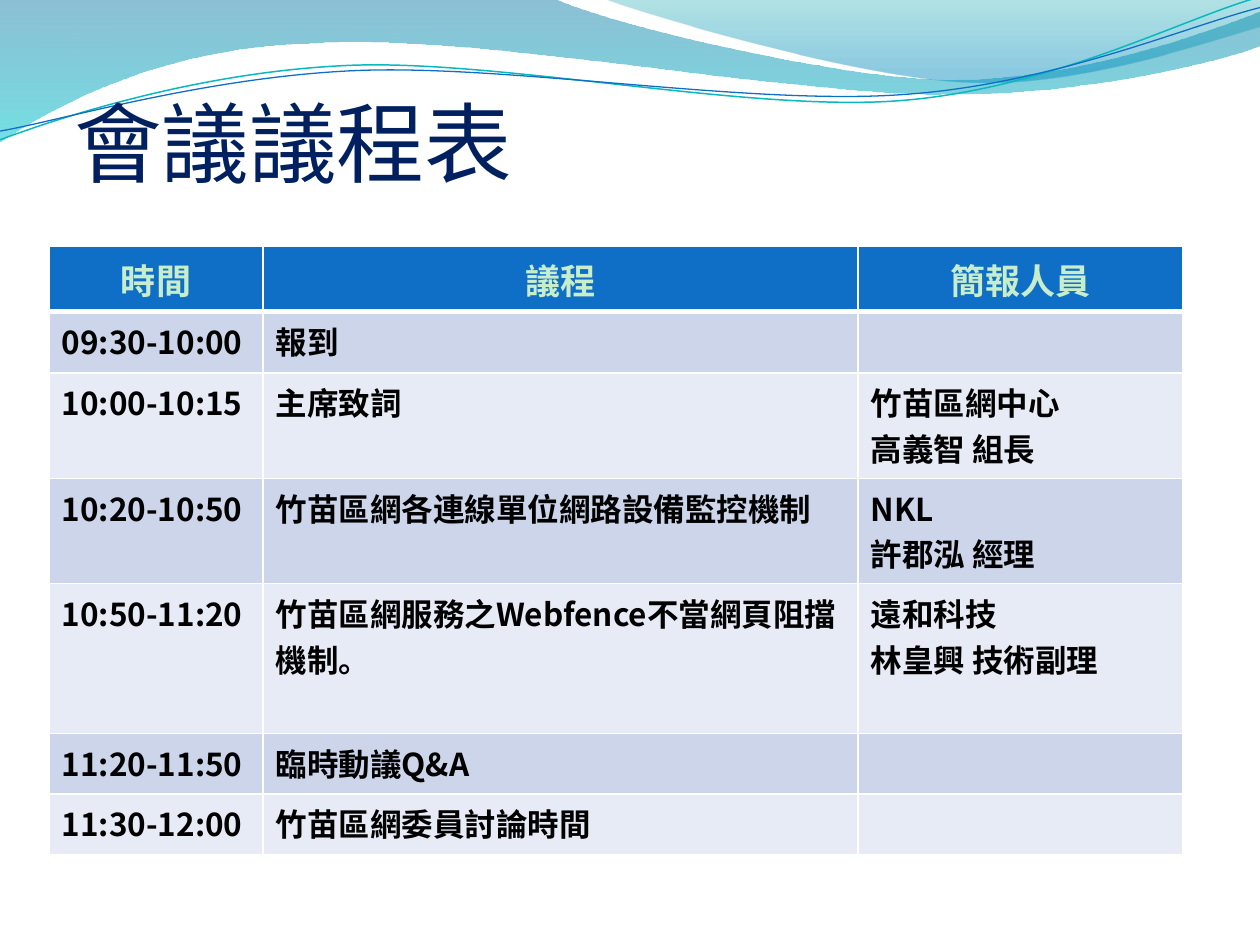
"""Build the meeting agenda slide with its wave header and schedule table."""
import pptx
import pptx.dml.color
import pptx.enum.text
import pptx.oxml.ns
import pptx.util
from lxml import etree

Pt = pptx.util.Pt
qn = pptx.oxml.ns.qn
ALIGN = pptx.enum.text.PP_ALIGN
ANCHOR = pptx.enum.text.MSO_ANCHOR
SANS = "Noto Sans CJK SC"
SERIF = "Times New Roman"


def rgb(value):
    return pptx.dml.color.RGBColor.from_string(value)


class Deck:
    white, navy, blue, mint, black = "FFFFFF", "002060", "0F6FC6", "C7EDCC", "000000"
    bands = ("CCD5EA", "E7EBF5")

    def __init__(self, width, height):
        self.prs = pptx.Presentation()
        self.prs.slide_width, self.prs.slide_height = Pt(width), Pt(height)
        self.slide = self.prs.slides.add_slide(self.prs.slide_layouts[6])
        fill = self.slide.background.fill
        fill.solid()
        fill.fore_color.rgb = rgb(self.white)

    def outline(self, start, segments, close):
        points = [(Pt(x), Pt(y)) for segment in segments for x, y in segment]
        builder = self.slide.shapes.build_freeform(Pt(start[0]), Pt(start[1]))
        builder.add_line_segments(points, close=close)
        sp = builder.convert_to_shape()
        sp.shadow.inherit = False
        lines = iter(list(sp._element.spPr.iter(qn("a:lnTo"))))
        for segment in segments:
            steps = [next(lines) for _ in segment]
            if len(steps) == 3:
                bezier = etree.Element(qn("a:cubicBezTo"))
                steps[0].addprevious(bezier)
                for step in steps:
                    bezier.append(step[0])
                    step.getparent().remove(step)
        return sp

    def wave(self, start, segments, stops):
        sp = self.outline(start, segments, True)
        sp.line.fill.background()
        sp.fill.gradient()
        sp.fill.gradient_angle = 270
        for stop, (position, color, _) in zip(sp.fill.gradient_stops, stops):
            stop.position = position
            stop.color.rgb = rgb(color)
        clrs = sp._element.spPr.iter(qn("a:srgbClr"))
        for clr, (_, _, opacity) in zip(clrs, stops):
            etree.SubElement(clr, qn("a:alpha"), val=str(opacity * 1000))

    def curve(self, start, segments, color, width):
        sp = self.outline(start, segments, False)
        sp.fill.background()
        sp.line.color.rgb = rgb(color)
        sp.line.width = Pt(width)

    def style_text(self, tf, size, font, color, bold=False, align=ALIGN.LEFT):
        for p in tf.paragraphs:
            p.alignment = align
            for r in p.runs:
                r.font.size, r.font.name, r.font.bold = Pt(size), font, bold
                r.font.color.rgb = rgb(color)
                etree.SubElement(r._r.get_or_add_rPr(), qn("a:ea"), typeface=SANS)

    def title(self, text, left, top, width, height):
        sp = self.slide.shapes.add_textbox(Pt(left), Pt(top), Pt(width), Pt(height))
        tf = sp.text_frame
        tf.word_wrap = True
        tf.vertical_anchor = ANCHOR.BOTTOM
        tf.margin_left = tf.margin_right = tf.margin_bottom = 0
        tf.margin_top = Pt(3.6)
        tf.text = text
        self.style_text(tf, 50, SANS, self.navy)

    def borders(self, cell, heavy_side):
        for side in "LRTB":
            width = Pt(3 if side == heavy_side else 1)
            ln = etree.SubElement(cell._tc.get_or_add_tcPr(), qn("a:ln" + side), w=str(width))
            fill = etree.SubElement(ln, qn("a:solidFill"))
            etree.SubElement(fill, qn("a:srgbClr"), val=self.white)

    def table(self, rows, left, top, widths, heights):
        table = self.slide.shapes.add_table(
            len(rows), len(widths), Pt(left), Pt(top), Pt(sum(widths)), Pt(sum(heights))
        ).table
        for column, width in zip(table.columns, widths):
            column.width = Pt(width)
        for i, (row, height) in enumerate(zip(rows, heights)):
            table.rows[i].height = Pt(height)
            for j, text in enumerate(row):
                cell = table.cell(i, j)
                cell.text = text
                self.borders(cell, {0: "B", 1: "T"}.get(i))
                cell.fill.solid()
                if i == 0:
                    cell.fill.fore_color.rgb = rgb(self.blue)
                    cell.vertical_anchor = ANCHOR.MIDDLE
                    cell.margin_left = cell.margin_right = 0
                    cell.margin_top = cell.margin_bottom = 0
                    self.style_text(cell.text_frame, 20, SERIF, self.mint, True, ALIGN.CENTER)
                else:
                    cell.fill.fore_color.rgb = rgb(self.bands[(i - 1) % 2])
                    self.style_text(cell.text_frame, 18, SANS, self.black, True)


AGENDA = [
    ("時間", "議程", "簡報人員"),
    ("09:30-10:00", "報到", ""),
    ("10:00-10:15", "主席致詞", "竹苗區網中心\n高義智 組長"),
    ("10:20-10:50", "竹苗區網各連線單位網路設備監控機制", "NKL\n許郡泓 經理"),
    ("10:50-11:20", "竹苗區網服務之Webfence不當網頁阻擋\n機制。", "遠和科技\n林皇興 技術副理"),
    ("11:20-11:50", "臨時動議Q&A", ""),
    ("11:30-12:00", "竹苗區網委員討論時間", ""),
]


def main():
    deck = Deck(720, 540)
    deck.wave(
        (0, 0),
        [
            [(316.8, -0.7)],
            [(342.7, 12.2), (478.1, 45.4), (545.8, 45.4)],
            [(614.2, 45.4), (689.8, 18.7), (720, 6.5)],
            [(720.7, 25.9)],
            [(707.8, 31.7), (626.4, 54.7), (537.1, 54)],
            [(447.8, 54), (275, 20.2), (185, 24.5)],
            [(92.9, 25.9), (33.1, 59.8), (-0.7, 81.4)],
        ],
        [(0, "0074A1", 45), (1, "00C6CF", 55)],
    )
    deck.wave(
        (344.9, -0.7),
        [
            [(366.5, 7.9), (491, 44.6), (553.7, 46.8)],
            [(616.3, 49.7), (691.9, 23), (720, 15.1)],
            [(720, 0)],
        ],
        [(0, "00A1A9", 30), (0.8, "008BBF", 45)],
    )
    deck.curve(
        (0, 79.9),
        [
            [(34.6, 67), (113.8, 41), (199.4, 37.4)],
            [(284.4, 33.8), (427, 64.1), (513.4, 57.6)],
            [(599.8, 51.1), (675.4, 10.8), (718.6, -1.4)],
        ],
        "0AB8BF", 0.85,
    )
    deck.curve(
        (0, 74.9),
        [
            [(33.8, 69.1), (118.1, 43.9), (203.8, 40.3)],
            [(290.2, 36.7), (429.8, 60.5), (516.2, 54)],
            [(601.9, 48.2), (677.5, 15.1), (720, 4.3)],
        ],
        deck.blue, 0.75,
    )
    deck.title("會議議程表", 42.5, 20.6, 648, 90)
    deck.table(
        AGENDA, 28.1, 140.6, (122.2, 340, 185.6), (37.4, 35.2, 60.2, 60.2, 85.6, 34.6, 34.6)
    )
    deck.prs.save("out.pptx")


if __name__ == "__main__":
    main()
